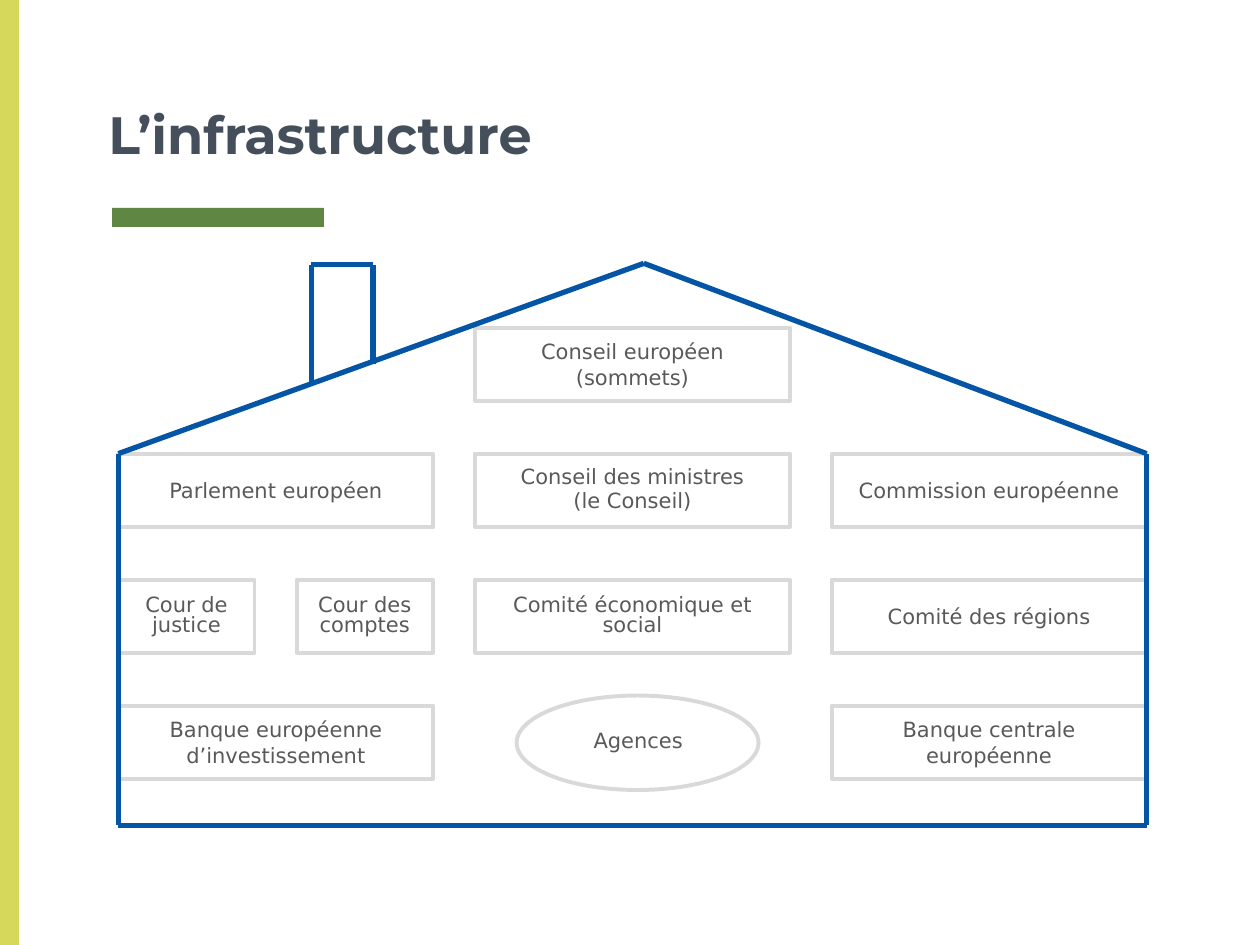
import pptx
import pptx.util
from pptx.dml.color import RGBColor
from pptx.enum.shapes import MSO_CONNECTOR, MSO_SHAPE
from pptx.enum.text import MSO_ANCHOR, MSO_AUTO_SIZE, PP_ALIGN
from pptx.oxml.ns import qn
from lxml import etree

Inches, Pt = pptx.util.Inches, pptx.util.Pt

TITLE = "L’infrastructure"
BARS = [((0.89, 1.65, 1.68, 0.15), "608643"), ((0, 0, 0.15, 7.5), "D5D85A")]

# column, row, span ("wide" or "half"), line spacing, paragraphs
ROOMS = [
    (1, 0, "wide", 1, ["Conseil européen (sommets)"]),
    (0, 1, "wide", 1, ["Parlement européen"]),
    (1, 1, "wide", 0.8, ["Conseil des ministres", "(le Conseil)"]),
    (2, 1, "wide", 1, ["Commission européenne"]),
    (0, 2, "half", 0.8, ["Cour de justice"]),
    (0.5, 2, "half", 0.8, ["Cour des comptes"]),
    (1, 2, "wide", 0.8, ["Comité économique et social"]),
    (2, 2, "wide", 1, ["Comité des régions"]),
    (0, 3, "wide", 1, ["Banque européenne d’investissement"]),
    (2, 3, "wide", 1, ["Banque centrale européenne"]),
]
WIDTH = {"wide": 2.5, "half": 1.08}
LEFT, TOP, HIGH = 0.94, 2.6, 0.58
STEP_X, STEP_Y = 2.83, 1

RIGHT, EAVES, FLOOR = 9.1, 3.6, 6.55
PEAK = (5.11, 2.09)
STACK_L, STACK_R, STACK_T = 2.47, 2.96, 2.1
HOUSE = [
    [(LEFT, EAVES), PEAK],
    [PEAK, (RIGHT, EAVES)],
    [(LEFT, EAVES), (LEFT, FLOOR)],
    [(RIGHT, EAVES), (RIGHT, FLOOR)],
    [(LEFT, FLOOR), (RIGHT, FLOOR)],
    [(STACK_L, STACK_T), (STACK_L, 3.05)],
    [(STACK_R, STACK_T), (STACK_R, 2.89)],
    [(STACK_L, STACK_T), (STACK_R, STACK_T)],
]

LABEL = {"size": Pt(12), "name": "DejaVu Sans", "bold": False}
HEAD = {"size": Pt(30), "name": "Montserrat", "bold": True}


def tint(color, code):
    color.rgb = RGBColor.from_string(code)


def style(par, form, code):
    for key, value in form.items():
        setattr(par.font, key, value)
    tint(par.font.color, code)


def write(shape, lines, spacing=1):
    frame = shape.text_frame
    frame.word_wrap = True
    frame.vertical_anchor = MSO_ANCHOR.MIDDLE
    for i, line in enumerate(lines):
        par = frame.add_paragraph() if i else frame.paragraphs[0]
        par.text = line
        par.alignment = PP_ALIGN.CENTER
        par.line_spacing = spacing
        par.space_before = Pt(2.4 if i else 0)
        style(par, LABEL, "595959")


def draw(slide, kind, place, fill, edge=None):
    shape = slide.shapes.add_shape(kind, *map(Inches, place))
    shape.shadow.inherit = False
    shape.fill.solid()
    tint(shape.fill.fore_color, fill)
    if edge:
        tint(shape.line.color, edge)
        shape.line.width = Pt(2.25)
    else:
        shape.line.fill.background()
    return shape


def join(slide, start, end):
    line = slide.shapes.add_connector(
        MSO_CONNECTOR.STRAIGHT, *map(Inches, start + end))
    tint(line.line.color, "0555A6")
    line.line.width = Pt(3)
    etree.SubElement(line._element.spPr, qn("a:effectLst"))


def main():
    deck = pptx.Presentation()
    deck.slide_width, deck.slide_height = Inches(10), Inches(7.5)
    slide = deck.slides.add_slide(deck.slide_layouts[5])

    title = slide.shapes.title
    title.left, title.top = Inches(0.76), Inches(0)
    title.width, title.height = Inches(8.49), Inches(1.41)
    frame = title.text_frame
    frame.text = TITLE
    frame.auto_size = MSO_AUTO_SIZE.NONE
    frame.vertical_anchor = MSO_ANCHOR.BOTTOM
    for side in ("left", "top", "right", "bottom"):
        setattr(frame, "margin_" + side, Inches(0.1))
    frame.paragraphs[0].alignment = PP_ALIGN.LEFT
    style(frame.paragraphs[0], HEAD, "454F5B")

    for place, fill in BARS:
        draw(slide, MSO_SHAPE.RECTANGLE, place, fill)

    for col, row, span, spacing, lines in ROOMS:
        place = (LEFT + col * STEP_X, TOP + row * STEP_Y, WIDTH[span], HIGH)
        room = draw(slide, MSO_SHAPE.RECTANGLE, place, "FFFFFF", "D9D9D9")
        write(room, lines, spacing)

    draw(slide, MSO_SHAPE.OVAL, (4.1, 5.52, 1.92, 0.75), "FFFFFF", "D9D9D9")
    label = slide.shapes.add_textbox(*map(Inches, (3.94, 5.66, 2.25, 0.42)))
    write(label, ["Agences"])

    for start, end in HOUSE:
        join(slide, start, end)

    deck.save("out.pptx")


if __name__ == "__main__":
    main()
